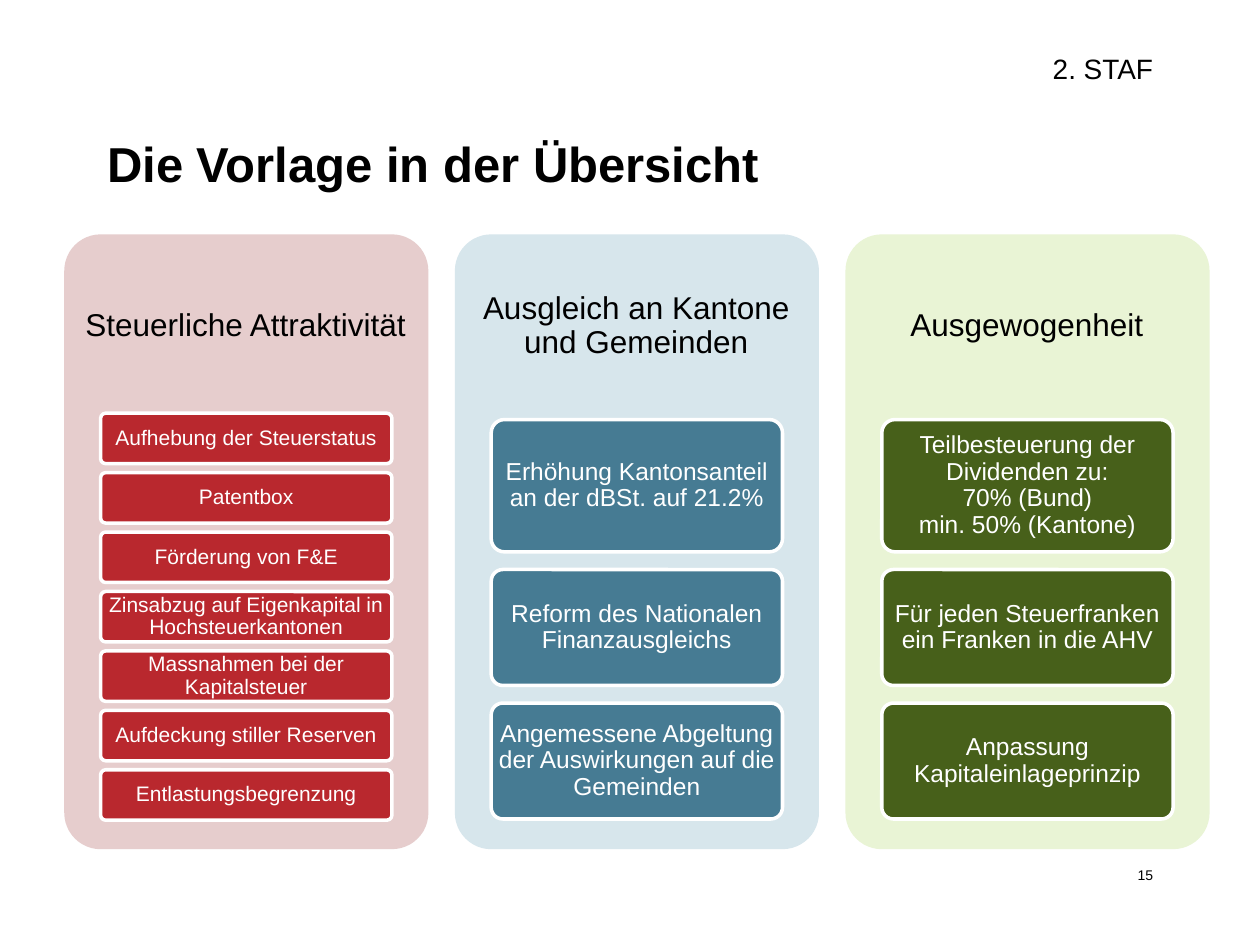
from pptx import Presentation
from pptx.dml.color import RGBColor
from pptx.enum.shapes import MSO_SHAPE
from pptx.enum.text import MSO_ANCHOR, PP_ALIGN
from pptx.util import Inches, Pt

ROUNDED = MSO_SHAPE.ROUNDED_RECTANGLE
MIDDLE, TOP = MSO_ANCHOR.MIDDLE, MSO_ANCHOR.TOP
LEFT, CENTER, RIGHT = PP_ALIGN.LEFT, PP_ALIGN.CENTER, PP_ALIGN.RIGHT

THEME = {
    "font": "Arial",
    "dark": "000000", "light": "FFFFFF",
    "red": ("E6CDCD", "B9282E"),
    "blue": ("D7E6EC", "467B93"),
    "green": ("E9F4D5", "47601A"),
    "title": 28, "heading": 18, "section": 16, "card": 14, "small_card": 12, "number": 8,
}

PANEL_LEFT, PANEL_TOP, PANEL_WIDTH, PANEL_HEIGHT = 0.51, 1.86, 2.89, 4.88
PANEL_PITCH = 3.1
CARD_WIDTH = 0.8 * PANEL_WIDTH
CARD_INDENT = 0.1 * PANEL_WIDTH
SMALL_ROWS = [(3.28 + row * 2.83 / 6, 0.4) for row in range(7)]
LARGE_ROWS = [(3.33, 1.05), (4.52, 0.92), (5.58, 0.92)]

COLUMNS = [
    ("Steuerliche Attraktivität", "red", "small_card", SMALL_ROWS, [
        "Aufhebung der Steuerstatus", "Patentbox", "Förderung von F&E",
        "Zinsabzug auf Eigenkapital in Hochsteuerkantonen",
        "Massnahmen bei der Kapitalsteuer", "Aufdeckung stiller Reserven",
        "Entlastungsbegrenzung"]),
    ("Ausgleich an Kantone und Gemeinden", "blue", "card", LARGE_ROWS, [
        "Erhöhung Kantonsanteil an der dBSt. auf 21.2%",
        "Reform des Nationalen Finanzausgleichs",
        "Angemessene Abgeltung der Auswirkungen auf die Gemeinden"]),
    ("Ausgewogenheit", "green", "card", LARGE_ROWS, [
        "Teilbesteuerung der Dividenden zu:\n70% (Bund)\nmin. 50% (Kantone)",
        "Für jeden Steuerfranken ein Franken in die AHV",
        "Anpassung Kapitaleinlageprinzip"]),
]


def write(shape, text, size, color="dark", align=CENTER, anchor=MIDDLE,
          inset=(0.1, 0.05), spacing=0.9, bold=False):
    frame = shape.text_frame
    frame.word_wrap = True
    frame.vertical_anchor = anchor
    frame.margin_left = frame.margin_right = Inches(inset[0])
    frame.margin_top = frame.margin_bottom = Inches(inset[1])
    paragraph = frame.paragraphs[0]
    paragraph.alignment = align
    paragraph.line_spacing = spacing
    for index, line in enumerate(text.split("\n")):
        if index:
            paragraph.add_line_break()
        run = paragraph.add_run()
        run.text = line
        run.font.name = THEME["font"]
        run.font.size = Pt(THEME[size])
        run.font.bold = bold
        run.font.color.rgb = RGBColor.from_string(THEME[color])


def add_panel(left, top, width, height, fill):
    shape = slide.shapes.add_shape(
        ROUNDED, Inches(left), Inches(top), Inches(width), Inches(height))
    shape.adjustments[0] = 0.1
    shape.shadow.inherit = False
    shape.fill.solid()
    shape.fill.fore_color.rgb = RGBColor.from_string(fill)
    shape.line.fill.background()
    return shape


presentation = Presentation()
presentation.slide_width = Inches(10)
presentation.slide_height = Inches(7.5)
slide = presentation.slides.add_slide(presentation.slide_layouts[5])

title = slide.shapes.title
title.left, title.top = Inches(0.75), Inches(0.67)
title.width, title.height = Inches(8.82), Inches(1.25)
write(title, "Die Vorlage in der Übersicht", "title", align=LEFT, spacing=1.0, bold=True)

number = slide.shapes.add_textbox(Inches(7.17), Inches(6.83), Inches(2.08), Inches(0.5))
write(number, "15", "number", align=RIGHT, anchor=TOP, spacing=1.0)

section = slide.shapes.add_textbox(Inches(5.39), Inches(0.36), Inches(3.86), Inches(0.3))
write(section, "2. STAF", "section", align=RIGHT, anchor=TOP, spacing=1.0)
section.text_frame.paragraphs[0].space_before = Pt(3)

for column, (heading, palette, card_size, rows, cards) in enumerate(COLUMNS):
    left = PANEL_LEFT + column * PANEL_PITCH
    panel_fill, card_fill = THEME[palette]
    add_panel(left, PANEL_TOP, PANEL_WIDTH, PANEL_HEIGHT, panel_fill)
    heading_box = slide.shapes.add_textbox(
        Inches(left + 0.04), Inches(1.9), Inches(2.8), Inches(1.38))
    write(heading_box, heading, "heading", inset=(0.07, 0.07))
    for (top, height), text in zip(rows, cards):
        card = add_panel(left + CARD_INDENT, top, CARD_WIDTH, height, card_fill)
        card.line.color.rgb = RGBColor.from_string(THEME["light"])
        card.line.width = Pt(2)
        write(card, text, card_size, "light", inset=(0.03, 0.03))

presentation.save("out.pptx")
